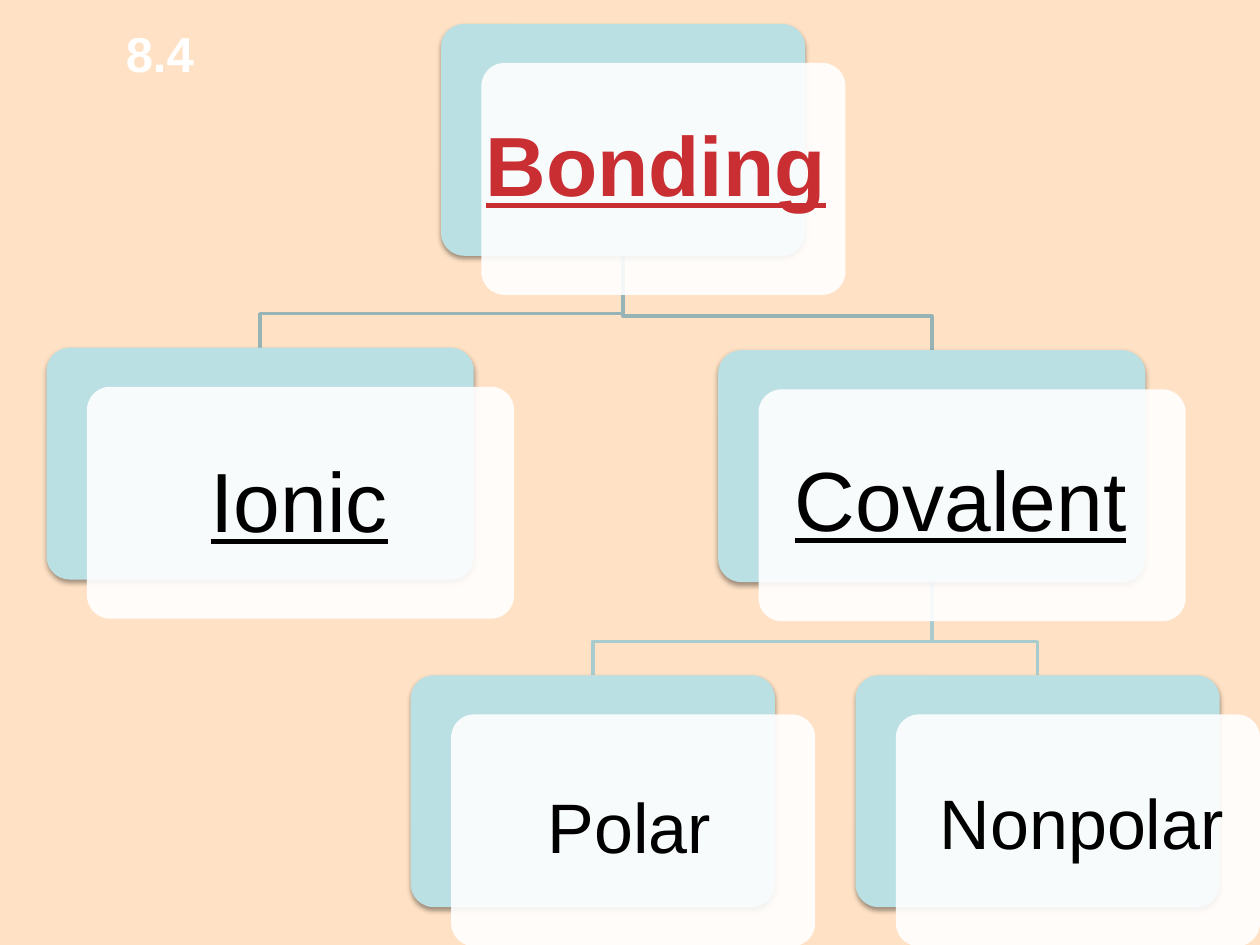
from dataclasses import dataclass

from lxml import etree
from pptx import Presentation
from pptx.dml.color import RGBColor
from pptx.enum.shapes import MSO_SHAPE
from pptx.enum.text import MSO_ANCHOR, MSO_AUTO_SIZE, PP_ALIGN
from pptx.oxml.ns import qn
from pptx.util import Inches, Pt

ROUNDED = MSO_SHAPE.ROUNDED_RECTANGLE
TOP = MSO_ANCHOR.TOP
FIXED = MSO_AUTO_SIZE.NONE
CENTER = PP_ALIGN.CENTER
LEFT = PP_ALIGN.LEFT

CARD_HEIGHT = 1.84
VEIL_OFFSET = (0.32, 0.31)
ELBOW_RISE = 0.27


@dataclass(frozen=True)
class Card:
    left: float
    top: float
    width: float

    @property
    def center(self) -> float:
        return self.left + self.width / 2


@dataclass(frozen=True)
class Label:
    text: str
    left: float
    top: float
    width: float
    height: float
    size: int
    color: str = "000000"
    bold: bool = False
    underline: bool = False
    alignment: PP_ALIGN = CENTER


BONDING = Card(3.5, 0.19, 2.89)
IONIC = Card(0.37, 2.76, 3.39)
COVALENT = Card(5.7, 2.78, 3.39)
POLAR = Card(3.26, 5.36, 2.89)
NONPOLAR = Card(6.79, 5.36, 2.89)
CARDS = (BONDING, IONIC, COVALENT, POLAR, NONPOLAR)

BRANCHES = (
    (COVALENT, NONPOLAR, "AACBCE"),
    (COVALENT, POLAR, "AACBCE"),
    (BONDING, COVALENT, "96B3B6"),
    (BONDING, IONIC, "96B3B6"),
)

HEADING = Label("Bonding", 3.58, 0.84, 3.25, 0.91, 48, "C82E32", True, True)
LABELS = (
    Label("8.4", 0.9, 0.14, 1, 0.55, 28, "FFFFFF", True, alignment=LEFT),
    Label("Ionic", 0.75, 3.51, 3.25, 0.91, 48, underline=True),
    Label("Covalent", 6, 3.5, 3.25, 0.91, 48, underline=True),
    Label("Polar", 3.58, 6.17, 2.83, 0.77, 40),
    Label("Nonpolar", 7.17, 6.14, 2.83, 0.77, 40),
)


def paint(fill, color: str) -> None:
    fill.solid()
    fill.fore_color.rgb = RGBColor.from_string(color)


def add_branch(slide, parent: Card, child: Card, color: str) -> None:
    bend = child.top - ELBOW_RISE
    points = (
        (parent.center, parent.top + CARD_HEIGHT),
        (parent.center, bend),
        (child.center, bend),
        (child.center, child.top),
    )
    start, *rest = [(Inches(x), Inches(y)) for x, y in points]
    builder = slide.shapes.build_freeform(*start)
    builder.add_line_segments(rest, close=False)
    shape = builder.convert_to_shape()
    shape.shadow.inherit = False
    shape.fill.background()
    paint(shape.line.fill, color)
    shape.line.width = Pt(2)


def add_panel(slide, left: float, top: float, width: float, color: str):
    shape = slide.shapes.add_shape(
        ROUNDED, Inches(left), Inches(top), Inches(width), Inches(CARD_HEIGHT)
    )
    shape.adjustments[0] = 0.1
    shape.shadow.inherit = False
    paint(shape.fill, color)
    shape.line.fill.background()
    return shape


def set_alpha(color_element, percent: int) -> None:
    alpha = etree.SubElement(color_element, qn("a:alpha"))
    alpha.set("val", str(percent * 1000))


def add_shadow(shape) -> None:
    effects = shape.element.spPr.find(qn("a:effectLst"))
    shadow = etree.SubElement(effects, qn("a:outerShdw"))
    shadow.set("blurRad", str(Pt(3.1)))
    shadow.set("dist", str(Pt(1.6)))
    shadow.set("dir", "5400000")
    shadow.set("rotWithShape", "0")
    color = etree.SubElement(shadow, qn("a:srgbClr"))
    color.set("val", "000000")
    set_alpha(color, 38)


def add_card(slide, card: Card) -> None:
    back = add_panel(slide, card.left, card.top, card.width, "BBE0E3")
    add_shadow(back)
    shift_x, shift_y = VEIL_OFFSET
    veil = add_panel(
        slide, card.left + shift_x, card.top + shift_y, card.width, "FFFFFF"
    )
    set_alpha(veil.element.spPr.find(qn("a:solidFill"))[0], 90)


def write_label(shape, label: Label) -> None:
    shape.left, shape.top = Inches(label.left), Inches(label.top)
    shape.width, shape.height = Inches(label.width), Inches(label.height)
    frame = shape.text_frame
    frame.text = label.text
    frame.word_wrap = True
    frame.auto_size = FIXED
    frame.vertical_anchor = TOP
    paragraph = frame.paragraphs[0]
    paragraph.alignment = label.alignment
    font = paragraph.font
    font.name = "Arial"
    font.size = Pt(label.size)
    font.bold = label.bold
    font.underline = label.underline
    paint(font.fill, label.color)


def main() -> None:
    presentation = Presentation()
    presentation.slide_width = Inches(10)
    presentation.slide_height = Inches(7.5)
    slide = presentation.slides.add_slide(presentation.slide_layouts[5])
    paint(slide.background.fill, "FFE2C5")

    for parent, child, color in BRANCHES:
        add_branch(slide, parent, child, color)
    for card in CARDS:
        add_card(slide, card)

    title = slide.shapes.title
    write_label(title, HEADING)
    slide.shapes.element.append(title.element)
    for label in LABELS:
        write_label(slide.shapes.add_textbox(0, 0, 0, 0), label)

    presentation.save("out.pptx")


if __name__ == "__main__":
    main()
